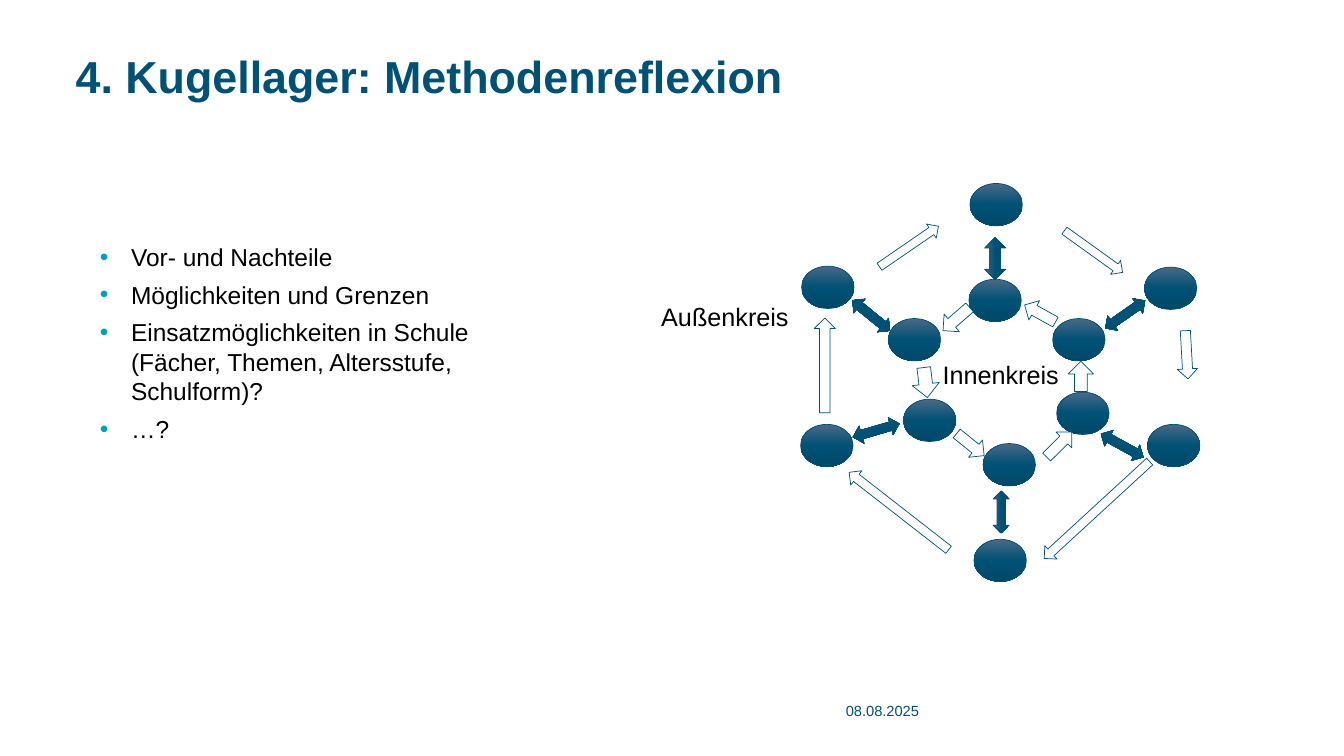
from copy import deepcopy

from lxml import etree
from pptx import Presentation
from pptx.dml.color import RGBColor
from pptx.enum.shapes import MSO_SHAPE
from pptx.enum.text import MSO_ANCHOR, MSO_AUTO_SIZE, PP_ALIGN
from pptx.oxml.ns import qn
from pptx.util import Inches, Pt

ELLIPSE = MSO_SHAPE.OVAL
DOUBLE_ARROW = MSO_SHAPE.LEFT_RIGHT_ARROW
LEFT_ARROW = MSO_SHAPE.LEFT_ARROW
TOP, MIDDLE = MSO_ANCHOR.TOP, MSO_ANCHOR.MIDDLE
NO_AUTOFIT = MSO_AUTO_SIZE.NONE
LEFT = PP_ALIGN.LEFT

FONT = "Arial"
COLORS = {
    "petrol": "005176",
    "petrol_light": "4B6986",
    "petrol_dark": "004869",
    "bullet": "00A1C0",
    "text": "000000",
    "white": "FFFFFF",
}
GRADIENT = [(0, "petrol_light"), (0.5, "petrol"), (1, "petrol_dark")]

BULLETS = [
    "Vor- und Nachteile",
    "Möglichkeiten und Grenzen",
    "Einsatzmöglichkeiten in Schule (Fächer, Themen, Altersstufe, Schulform)?",
    "…?",
]

# Left and top of each person
PERSON_SIZE = (0.52, 0.42)
OUTER_CIRCLE = [(9.62, 1.82), (11.35, 2.65), (11.38, 4.21),
                (9.66, 5.35), (7.94, 4.21), (7.95, 2.64)]
INNER_CIRCLE = [(9.61, 2.77), (10.44, 3.16), (10.48, 3.89),
                (9.75, 4.4), (8.96, 3.96), (8.81, 3.16)]

# Left, top, width, height, rotation
PARTNER_ARROWS = [
    (9.66, 2.46, 0.42, 0.21, 270),
    (10.92, 3.03, 0.48, 0.18, 325.2),
    (10.89, 4.33, 0.48, 0.18, 28.9),
    (9.72, 5, 0.42, 0.16, 270),
    (8.45, 4.18, 0.48, 0.18, 343.8),
    (8.4, 3.04, 0.48, 0.18, 219.1),
]
OUTER_ARROWS = [
    (10.49, 2.41, 0.71, 0.17, 215.7),
    (11.53, 3.42, 0.48, 0.2, 266.8),
    (10.17, 4.97, 1.42, 0.18, 317.4),
    (8.29, 4.98, 1.25, 0.18, 37.9),
    (7.71, 3.52, 0.94, 0.21, 90),
    (8.66, 2.36, 0.71, 0.17, 145.5),
]
INNER_ARROWS = [
    (9.31, 3.05, 0.35, 0.23, 318.8),
    (9.03, 3.66, 0.3, 0.27, 263.1),
    (9.45, 4.3, 0.35, 0.22, 218.9),
    (10.33, 4.3, 0.35, 0.22, 135.2),
    (10.57, 3.61, 0.3, 0.25, 90),
    (10.14, 3, 0.35, 0.22, 29),
]


def color(name):
    return RGBColor.from_string(COLORS[name])


class SlideBuilder:
    def __init__(self, presentation):
        self.slide = presentation.slides.add_slide(presentation.slide_layouts[1])

    def place(self, shape, box):
        shape.left, shape.top, shape.width, shape.height = map(Inches, box)

    def set_frame(self, frame, anchor, inset=None):
        frame.word_wrap = True
        frame.auto_size = NO_AUTOFIT
        frame.vertical_anchor = anchor
        if inset is not None:
            frame.margin_left = frame.margin_right = Inches(inset)
            frame.margin_top = frame.margin_bottom = Inches(inset)

    def set_font(self, paragraph, size, color_name, bold=False):
        paragraph.alignment = LEFT
        font = paragraph.font
        font.name, font.size, font.bold = FONT, Pt(size), bold
        font.color.rgb = color(color_name)

    def title(self, text, box):
        shape = self.slide.shapes.title
        self.place(shape, box)
        self.set_frame(shape.text_frame, TOP, 0)
        paragraph = shape.text_frame.paragraphs[0]
        paragraph.text = text
        paragraph.line_spacing = 0.9
        self.set_font(paragraph, 32, "petrol", bold=True)

    def bullet_list(self, items, box):
        shape = self.slide.placeholders[1]
        self.place(shape, box)
        frame = shape.text_frame
        self.set_frame(frame, TOP)
        frame.text = "\n".join(items)
        for paragraph in frame.paragraphs:
            self.add_bullet(paragraph)
            paragraph.space_before, paragraph.space_after = Pt(0), Pt(6)
            self.set_font(paragraph, 17.5, "text")

    def add_bullet(self, paragraph):
        properties = paragraph._p.get_or_add_pPr()
        properties.set("marL", str(Inches(0.31)))
        properties.set("indent", str(-Inches(0.31)))
        bullet_color = etree.SubElement(properties, qn("a:buClr"))
        etree.SubElement(bullet_color, qn("a:srgbClr"), val=COLORS["bullet"])
        etree.SubElement(properties, qn("a:buFont"), typeface=FONT)
        etree.SubElement(properties, qn("a:buChar"), char="•")

    def label(self, text, box, size, color_name, anchor=TOP, inset=None):
        shape = self.slide.shapes.add_textbox(*map(Inches, box))
        self.set_frame(shape.text_frame, anchor, inset)
        paragraph = shape.text_frame.paragraphs[0]
        paragraph.text = text
        self.set_font(paragraph, size, color_name)

    def symbol(self, kind, box, rotation=0, gradient=True):
        shape = self.slide.shapes.add_shape(kind, *map(Inches, box))
        shape.rotation = rotation
        shape.shadow.inherit = False
        shape.line.color.rgb = color("petrol")
        shape.line.width = Pt(0.5)
        if gradient:
            self.fill_gradient(shape.fill)
        else:
            shape.fill.solid()
            shape.fill.fore_color.rgb = color("white")

    def fill_gradient(self, fill):
        """Shade from light at the top to dark at the bottom in three stops."""
        fill.gradient()
        fill.gradient_angle = 270
        first_stop = fill.gradient_stops[0]._gs
        first_stop.addnext(deepcopy(first_stop))
        for stop, (position, name) in zip(fill.gradient_stops, GRADIENT):
            stop.position = position
            stop.color.rgb = color(name)


def main():
    presentation = Presentation()
    presentation.slide_width = Inches(13.33)
    presentation.slide_height = Inches(7.5)

    builder = SlideBuilder(presentation)
    builder.title("4. Kugellager: Methodenreflexion", (0.75, 0.54, 11.98, 1.33))
    builder.label("08.08.2025", (8.39, 6.92, 1.34, 0.27), 10.5, "petrol", MIDDLE, 0)
    builder.bullet_list(BULLETS, (0.89, 2.35, 4.09, 2.12))

    for position in INNER_CIRCLE + OUTER_CIRCLE:
        builder.symbol(ELLIPSE, position + PERSON_SIZE)
    for *box, rotation in PARTNER_ARROWS:
        builder.symbol(DOUBLE_ARROW, box, rotation)
    for *box, rotation in OUTER_ARROWS + INNER_ARROWS:
        builder.symbol(LEFT_ARROW, box, rotation, gradient=False)

    builder.label("Innenkreis", (9.25, 3.52, 1.52, 0.4), 18, "text")
    builder.label("Außenkreis", (6.46, 2.94, 1.5, 0.4), 18, "text")
    presentation.save("out.pptx")


if __name__ == "__main__":
    main()
